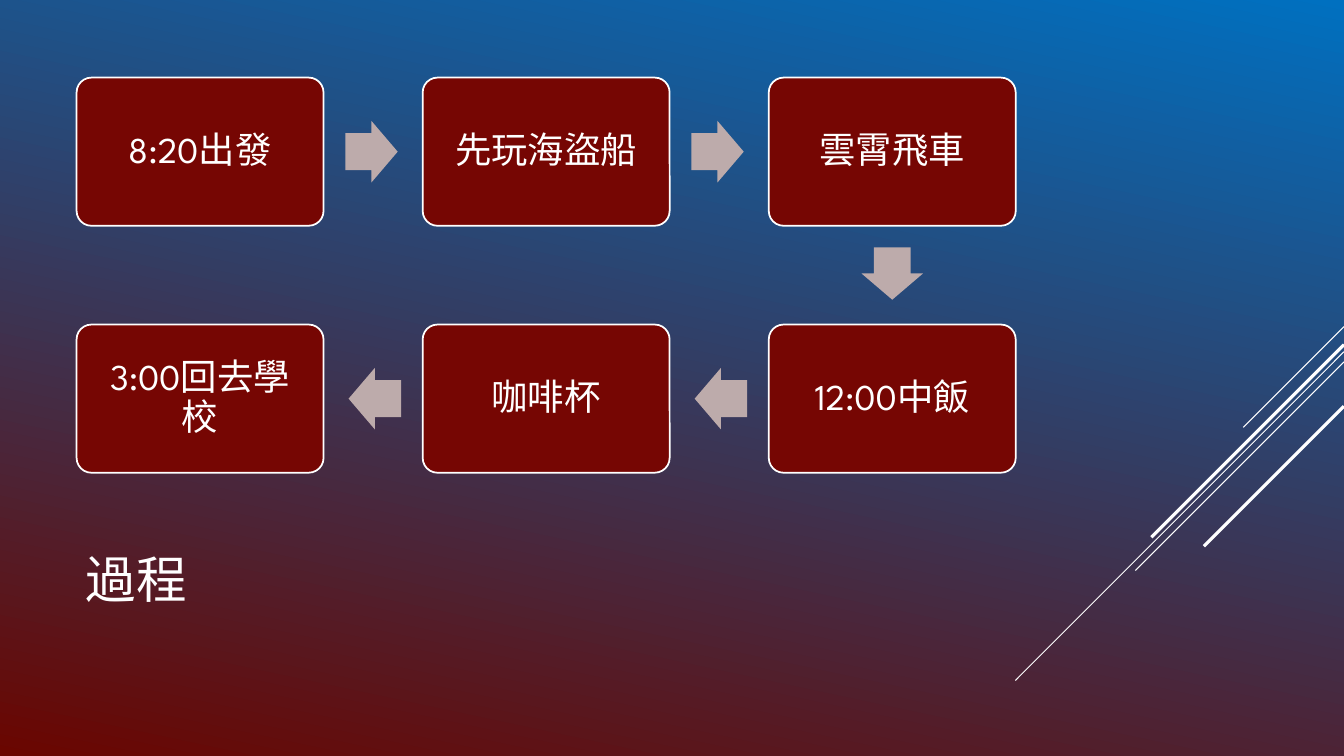
import pptx
import pptx.dml.color
import pptx.enum.shapes
import pptx.enum.text
import pptx.oxml
import pptx.oxml.ns
import pptx.util

GRID_COLUMNS, GRID_ROWS = 160, 90
STEP_WIDTH, STEP_HEIGHT = 29.4, 17.64
FIRST_COLUMN, FIRST_ROW = 9.12, 9.24
COLUMN_PITCH, ROW_PITCH = 41.2, 29.4
ARROW_LENGTH, ARROW_BREADTH, ARROW_SHIFT = 6.24, 7.32, 0.2

WHITE, MAROON, ROSE, BLUE, RED = "FFFFFF", "760603", "BDABAB", "0070C0", "6A0600"

SCHEDULE = [
    ("8:20出發", 0, 0),
    ("先玩海盜船", 1, 0),
    ("雲霄飛車", 2, 0),
    ("12:00中飯", 2, 1),
    ("咖啡杯", 1, 1),
    ("3:00回去學校", 0, 1),
]
RAYS = [
    (38.88, 12, 0.75),
    (41.88, 39.12, 0.75),
    (43.08, 24.84, 0.75),
    (41.04, 22.92, 2.25),
    (48.36, 16.68, 2.25),
]
TURNS = {(1, 0): 0, (0, 1): 90, (-1, 0): 180}


def color(hex_code):
    return pptx.dml.color.RGBColor.from_string(hex_code)


class Board:
    font_name = "League Spartan"

    def __init__(self, deck):
        self.unit = deck.slide_width / GRID_COLUMNS
        self.slide = deck.slides.add_slide(deck.slide_layouts[5])

    def cells(self, *counts):
        return [round(count * self.unit) for count in counts]

    def style(self, paragraph, size, alignment):
        paragraph.alignment = alignment
        paragraph.font.name = self.font_name
        paragraph.font.size = pptx.util.Pt(size)
        paragraph.font.color.rgb = color(WHITE)

    def background(self, top, bottom, angle):
        fill = self.slide.background.fill
        fill.gradient()
        fill.gradient_angle = angle
        for stop, hex_code in zip(fill.gradient_stops, (top, bottom)):
            stop.color.rgb = color(hex_code)

    def title(self, wording, *place):
        heading = self.slide.shapes.title
        heading.left, heading.top, heading.width, heading.height = self.cells(*place)
        heading.text_frame.text = wording
        heading.text_frame.vertical_anchor = pptx.enum.text.MSO_ANCHOR.MIDDLE
        self.style(heading.text_frame.paragraphs[0], 36, pptx.enum.text.PP_ALIGN.LEFT)

    def ray(self, row, reach, weight):
        ends = self.cells(GRID_COLUMNS, row, GRID_COLUMNS - reach, row + reach)
        ray = self.slide.shapes.add_connector(
            pptx.enum.shapes.MSO_CONNECTOR.STRAIGHT, *ends)
        ray.line.color.rgb = color(WHITE)
        ray.line.width = pptx.util.Pt(weight)
        properties = ray._element.spPr
        properties.append(pptx.oxml.parse_xml(
            f"<a:effectLst {pptx.oxml.ns.nsdecls('a')}/>"))

    def block(self, preset, fill, adjustments, *place):
        block = self.slide.shapes.add_shape(preset, *self.cells(*place))
        block.shadow.inherit = False
        block.fill.solid()
        block.fill.fore_color.rgb = color(fill)
        for index, value in enumerate(adjustments):
            block.adjustments[index] = value
        return block

    def step(self, wording, column, row):
        step = self.block(
            pptx.enum.shapes.MSO_SHAPE.ROUNDED_RECTANGLE, MAROON, [0.1],
            FIRST_COLUMN + column * COLUMN_PITCH, FIRST_ROW + row * ROW_PITCH,
            STEP_WIDTH, STEP_HEIGHT)
        step.line.color.rgb = color(WHITE)
        step.line.width = pptx.util.Pt(1.25)
        frame = step.text_frame
        frame.text = wording
        frame.word_wrap = True
        frame.vertical_anchor = pptx.enum.text.MSO_ANCHOR.MIDDLE
        inset = pptx.util.Inches(0.11)
        frame.margin_left = frame.margin_right = inset
        frame.margin_top = frame.margin_bottom = inset
        paragraph = frame.paragraphs[0]
        paragraph.line_spacing = 0.9
        self.style(paragraph, 26, pptx.enum.text.PP_ALIGN.CENTER)

    def arrow(self, column, row, next_column, next_row):
        across, down = next_column - column, next_row - row
        center_x = (FIRST_COLUMN + STEP_WIDTH / 2
                    + (column + next_column) / 2 * COLUMN_PITCH - across * ARROW_SHIFT)
        center_y = (FIRST_ROW + STEP_HEIGHT / 2
                    + (row + next_row) / 2 * ROW_PITCH - down * ARROW_SHIFT)
        arrow = self.block(
            pptx.enum.shapes.MSO_SHAPE.RIGHT_ARROW, ROSE, [0.6, 0.5],
            center_x - ARROW_LENGTH / 2, center_y - ARROW_BREADTH / 2,
            ARROW_LENGTH, ARROW_BREADTH)
        arrow.line.fill.background()
        arrow.rotation = TURNS[across, down]


def main():
    deck = pptx.Presentation()
    deck.slide_width = pptx.util.Inches(40 / 3)
    deck.slide_height = pptx.util.Inches(7.5)
    board = Board(deck)
    board.background(BLUE, RED, 258)
    for ray in RAYS:
        board.ray(*ray)
    board.title("過程", 9, 58.92, 112, 19.8)
    for stop in SCHEDULE:
        board.step(*stop)
    for stop, following in zip(SCHEDULE, SCHEDULE[1:]):
        board.arrow(*stop[1:], *following[1:])
    deck.save("out.pptx")


if __name__ == "__main__":
    main()
